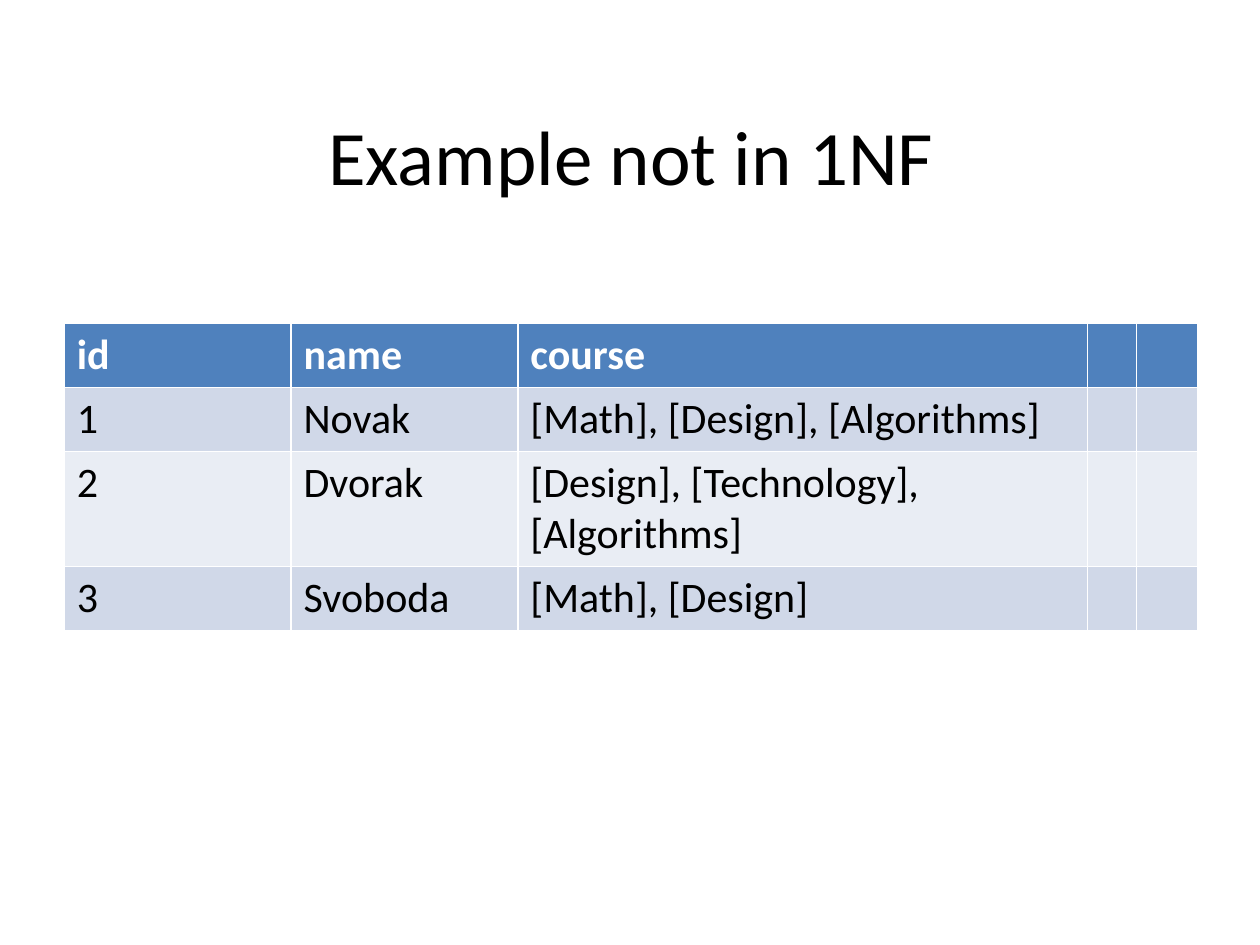
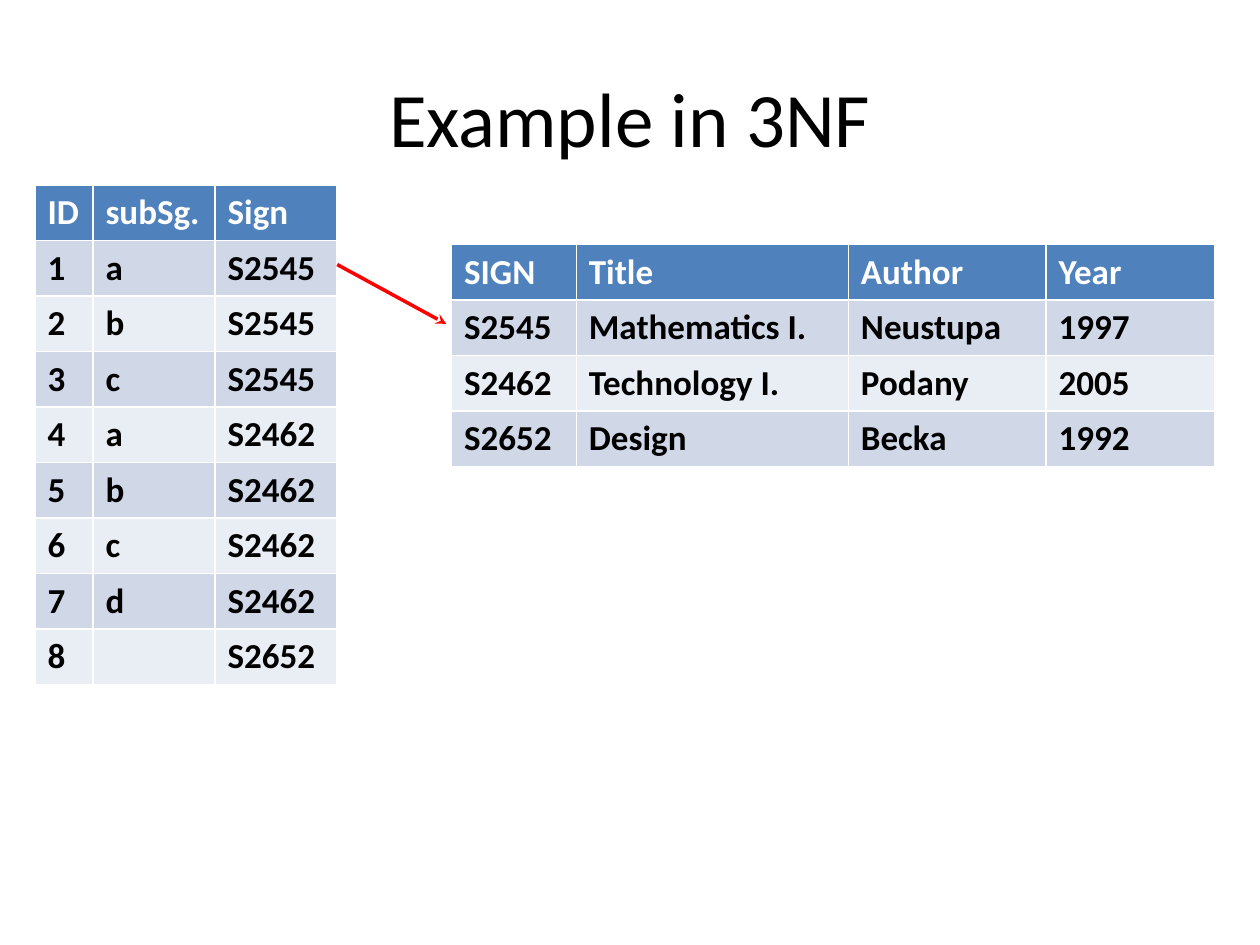
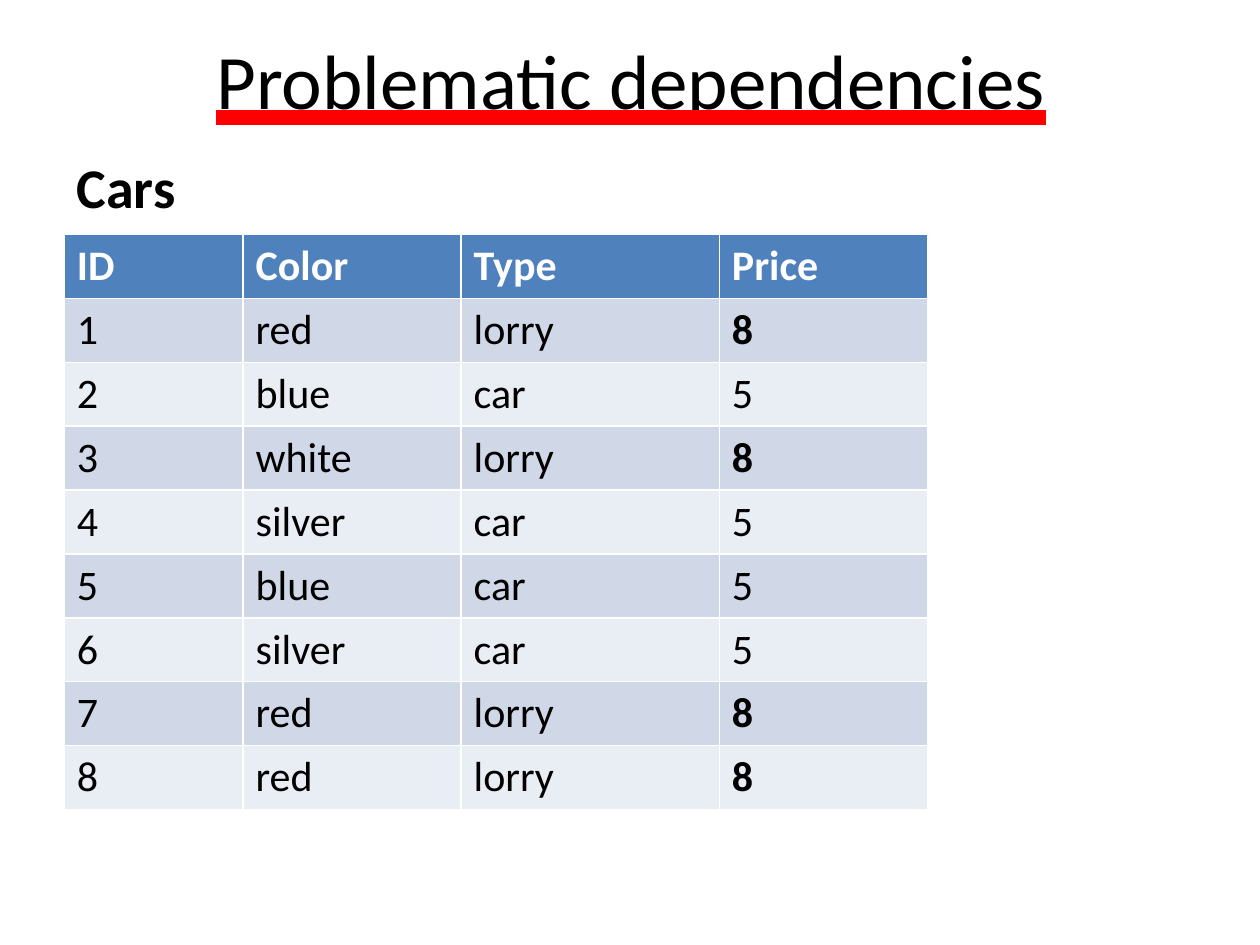
from collections import namedtuple

from lxml.etree import SubElement
from pptx import Presentation
from pptx.dml.color import RGBColor
from pptx.enum.shapes import MSO_CONNECTOR as Connector
from pptx.enum.text import MSO_ANCHOR as Anchor
from pptx.enum.text import MSO_AUTO_SIZE as AutoSize
from pptx.enum.text import MSO_UNDERLINE as Underline
from pptx.enum.text import PP_ALIGN as Align
from pptx.oxml.ns import qn
from pptx.util import Pt

Box = namedtuple("Box", "left top width height")

FONT = "Calibri"
BLACK, WHITE, RED = "000000", "FFFFFF", "FF0000"
HEADER_FILL = "4F81BD"
BAND_FILLS = ("D0D8E8", "E9EDF4")
ROW_HEIGHT = 29.2
TITLE_WIDTH, TITLE_HEIGHT = 648, 90


def colour(value):
    """Turn a hex string into a colour."""
    return RGBColor.from_string(value)


def style(para, size, value=BLACK, bold=False):
    """Set the font of a whole paragraph."""
    font = para.font
    font.name, font.size, font.bold = FONT, Pt(size), bold
    font.color.rgb = colour(value)


def place(shape, box):
    """Move a shape into a box given in points."""
    shape.left, shape.top, shape.width, shape.height = map(Pt, box)


def add_page(deck, title, left, top):
    """Add a slide with the shared title style and return it."""
    page = deck.slides.add_slide(deck.slide_layouts[5])
    heading = page.shapes.title
    place(heading, Box(left, top, TITLE_WIDTH, TITLE_HEIGHT))
    frame = heading.text_frame
    frame.text = title
    frame.vertical_anchor = Anchor.MIDDLE
    para = frame.paragraphs[0]
    para.alignment = Align.CENTER
    style(para, 44)
    return page


def underline_title(page, value):
    """Underline the title with a heavy coloured line."""
    span = page.shapes.title.text_frame.paragraphs[0].runs[0]
    span.font.underline = Underline.HEAVY_LINE
    line_fill = SubElement(span.font._element, qn("a:uFill"))
    solid = SubElement(line_fill, qn("a:solidFill"))
    SubElement(solid, qn("a:srgbClr")).set("val", value)


def add_grid(page, left, top, widths, rows, size, is_bold):
    """Draw a table with a header and banded rows, and return its box."""
    box = Box(left, top, sum(widths), ROW_HEIGHT * len(rows))
    table = page.shapes.add_table(len(rows), len(widths), *map(Pt, box)).table
    for column, width in zip(table.columns, widths):
        column.width = Pt(width)
    for row_index, row in enumerate(rows):
        table.rows[row_index].height = Pt(ROW_HEIGHT)
        header = row_index == 0
        fill = HEADER_FILL if header else BAND_FILLS[(row_index - 1) % 2]
        for column_index, text in enumerate(row):
            cell = table.cell(row_index, column_index)
            cell.text = text
            cell.fill.solid()
            cell.fill.fore_color.rgb = colour(fill)
            style(cell.text_frame.paragraphs[0], size,
                  WHITE if header else BLACK,
                  header or is_bold(column_index, text))
    return box


def add_arrow(page, start, end):
    """Draw a red arrow between two points."""
    points = map(Pt, (*start, *end))
    arrow = page.shapes.add_connector(Connector.STRAIGHT, *points)
    arrow.line.color.rgb = colour(RED)
    arrow.line.width = Pt(2)
    SubElement(arrow.line._get_or_add_ln(), qn("a:tailEnd")).set("type", "stealth")
    SubElement(arrow._element.spPr, qn("a:effectLst"))


def add_caption(page, text, box):
    """Write a bold table caption in a box."""
    caption = page.shapes.add_textbox(*map(Pt, box))
    frame = caption.text_frame
    frame.word_wrap = True
    frame.auto_size = AutoSize.SHAPE_TO_FIT_TEXT
    frame.text = text
    style(frame.paragraphs[0], 32, bold=True)


def build_not_1nf(deck):
    """Build the slide with lists inside cells."""
    page = add_page(deck, "Example not in 1NF", 36.7, 43.2)
    rows = [
        ("id", "name", "course", "", ""),
        ("1", "Novak", "[Math], [Design], [Algorithms]", "", ""),
        ("2", "Dvorak", "[Design], [Technology], [Algorithms]", "", ""),
        ("3", "Svoboda", "[Math], [Design]", "", ""),
    ]
    add_grid(page, 36.7, 185, (129.6, 129.6, 325.6, 28, 35), rows, 24,
             lambda column, text: False)


def build_3nf(deck):
    """Build the slide with copies that refer to book titles."""
    page = add_page(deck, "Example in 3NF", 36, 21.6)
    books = [
        ("SIGN", "Title", "Author", "Year"),
        ("S2545", "Mathematics I.", "Neustupa", "1997"),
        ("S2462", "Technology I.", "Podany", "2005"),
        ("S2652", "Design", "Becka", "1992"),
    ]
    copies = [
        ("ID", "subSg.", "Sign"),
        ("1", "a", "S2545"),
        ("2", "b", "S2545"),
        ("3", "c", "S2545"),
        ("4", "a", "S2462"),
        ("5", "b", "S2462"),
        ("6", "c", "S2462"),
        ("7", "d", "S2462"),
        ("8", "", "S2652"),
    ]
    all_bold = lambda column, text: True
    book_box = add_grid(page, 258, 139.7, (71.3, 155.5, 113, 96.5), books, 20, all_bold)
    copy_box = add_grid(page, 20, 105.8, (33.1, 69.8, 69.8), copies, 20, all_bold)
    add_arrow(page, (copy_box.left + copy_box.width, copy_box.top + 45.4),
              (book_box.left - 3, book_box.top + 45.4))


def build_dependencies(deck):
    """Build the slide where the price depends on the car type."""
    page = add_page(deck, "Problematic dependencies", 36.7, 0)
    underline_title(page, RED)
    cars = [
        ("ID", "Color", "Type", "Price"),
        ("1", "red", "lorry", "8"),
        ("2", "blue", "car", "5"),
        ("3", "white", "lorry", "8"),
        ("4", "silver", "car", "5"),
        ("5", "blue", "car", "5"),
        ("6", "silver", "car", "5"),
        ("7", "red", "lorry", "8"),
        ("8", "red", "lorry", "8"),
    ]
    price_column = cars[0].index("Price")
    box = add_grid(page, 36.7, 134, (102.2, 124.6, 147.6, 118.8), cars, 24,
                   lambda column, text: column == price_column and text == "8")
    add_caption(page, "Cars", Box(box.left, box.top - 50.5, 244, 46))


def main():
    """Build and save the deck."""
    deck = Presentation()
    deck.slide_width, deck.slide_height = Pt(720), Pt(540)
    for build in (build_not_1nf, build_3nf, build_dependencies):
        build(deck)
    deck.save("out.pptx")


if __name__ == "__main__":
    main()
